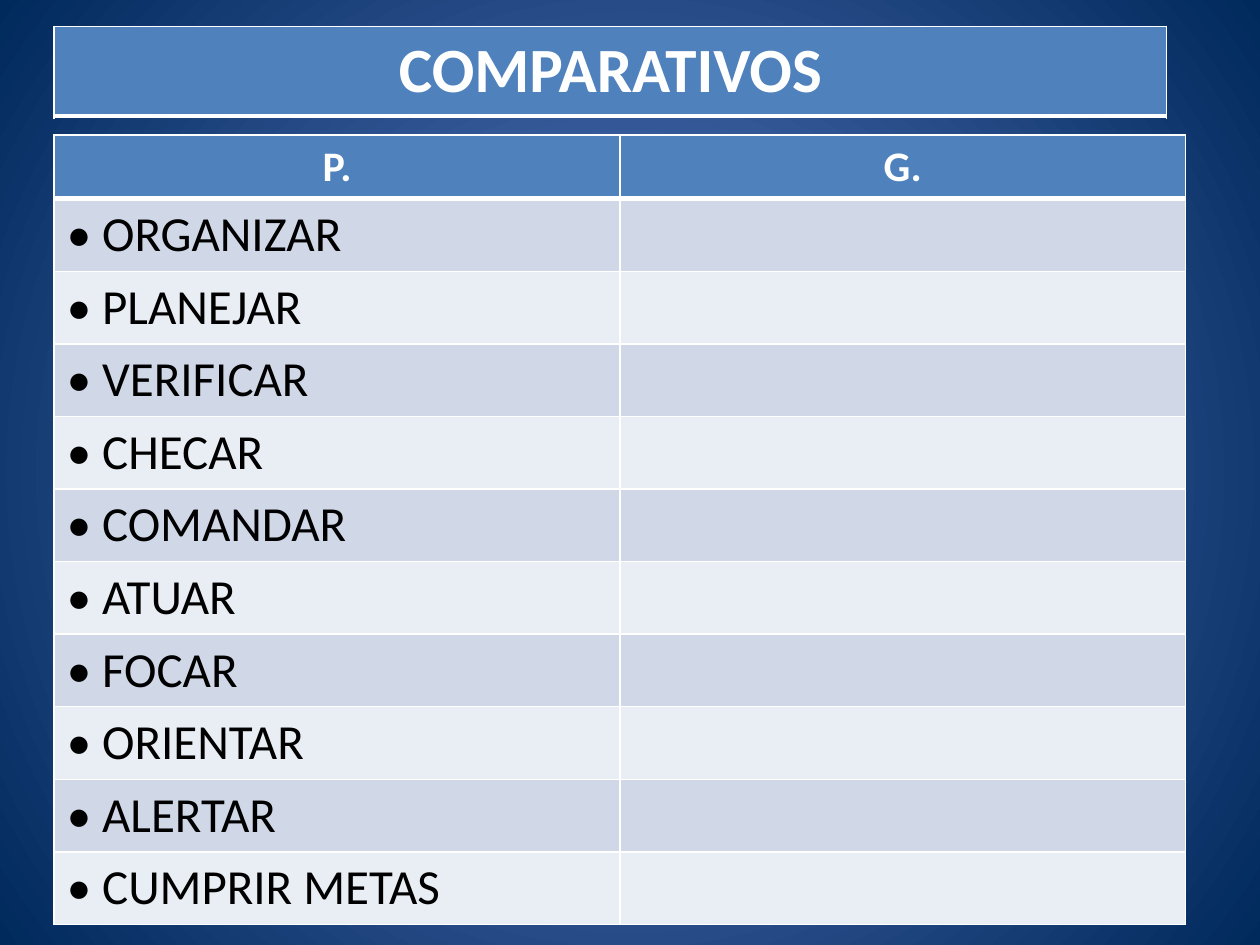
from lxml import etree
from pptx import Presentation
from pptx.dml.color import RGBColor
from pptx.enum import text
from pptx.oxml import parse_xml
from pptx.oxml.ns import nsdecls, qn
from pptx.util import Inches, Pt

TITLE = "COMPARATIVOS"
HEADERS = ["P.", "G."]
ACTIONS = ["ORGANIZAR", "PLANEJAR", "VERIFICAR", "CHECAR", "COMANDAR",
           "ATUAR", "FOCAR", "ORIENTAR", "ALERTAR", "CUMPRIR METAS"]

WHITE = RGBColor(0xFF, 0xFF, 0xFF)
BLACK = RGBColor(0x00, 0x00, 0x00)
BLUE = RGBColor(0x4F, 0x81, 0xBD)
BANDS = [RGBColor(0xD0, 0xD8, 0xE8), RGBColor(0xE9, 0xED, 0xF4)]
GLOW = RGBColor(0x5E, 0x7C, 0xC5)
NAVY = RGBColor(0x00, 0x29, 0x5C)

LEFT = 0.43
THIN, THICK = 1, 3
TITLE_BORDERS = {"L": THIN, "R": THIN, "T": THIN, "B": THICK}
HEADER_BORDERS = {"L": THIN, "R": THIN, "B": THICK}
BODY_BORDERS = {"L": THIN, "R": THIN, "T": THIN, "B": THIN}


def paint_background(slide):
    fill = slide.background.fill
    fill.gradient()
    for stop, color in zip(fill.gradient_stops, (GLOW, NAVY)):
        stop.color.rgb = color
    grad = next(slide.element.iter(qn("a:gradFill")))
    for lin in grad.findall(qn("a:lin")):
        grad.remove(lin)
    grad.append(parse_xml(
        f'<a:path {nsdecls("a")} path="circle">'
        '<a:fillToRect l="50000" t="50000" r="50000" b="50000"/></a:path>'))


def add_grid(slide, top, width, heights, columns):
    frame = slide.shapes.add_table(len(heights), columns, Inches(LEFT), Inches(top),
                                   Inches(width), Inches(sum(heights)))
    table = frame.table
    for row, height in zip(table.rows, heights):
        row.height = Inches(height)
    return table


def style_cell(cell, label, size, color, fill, borders, heading=False):
    tcPr = cell._tc.get_or_add_tcPr()
    for side, width in borders.items():
        ln = etree.SubElement(tcPr, qn(f"a:ln{side}"), w=str(Pt(width)))
        solid = etree.SubElement(ln, qn("a:solidFill"))
        etree.SubElement(solid, qn("a:srgbClr"), val=str(WHITE))
    cell.fill.solid()
    cell.fill.fore_color.rgb = fill
    if not label:
        return
    p = cell.text_frame.paragraphs[0]
    p.text = label
    p.alignment = text.PP_ALIGN.CENTER if heading else text.PP_ALIGN.LEFT
    font = p.runs[0].font
    font.name, font.size, font.bold = "Calibri", Pt(size), heading
    font.color.rgb = color


def main():
    prs = Presentation()
    prs.slide_width, prs.slide_height = Inches(10), Inches(7.5)
    slide = prs.slides.add_slide(prs.slide_layouts[6])
    paint_background(slide)

    banner = add_grid(slide, 0.21, 8.83, [0.7], 1)
    style_cell(banner.cell(0, 0), TITLE, 36, WHITE, BLUE, TITLE_BORDERS, True)

    heights = [0.5] + [0.576] * len(ACTIONS)
    table = add_grid(slide, 1.07, 8.98, heights, len(HEADERS))
    for c, header in enumerate(HEADERS):
        style_cell(table.cell(0, c), header, 24, WHITE, BLUE, HEADER_BORDERS, True)
    for r, action in enumerate(ACTIONS):
        for c, label in enumerate((f"• {action}", "")):
            style_cell(table.cell(r + 1, c), label, 28, BLACK,
                       BANDS[r % 2], BODY_BORDERS)

    prs.save("out.pptx")


if __name__ == "__main__":
    main()
